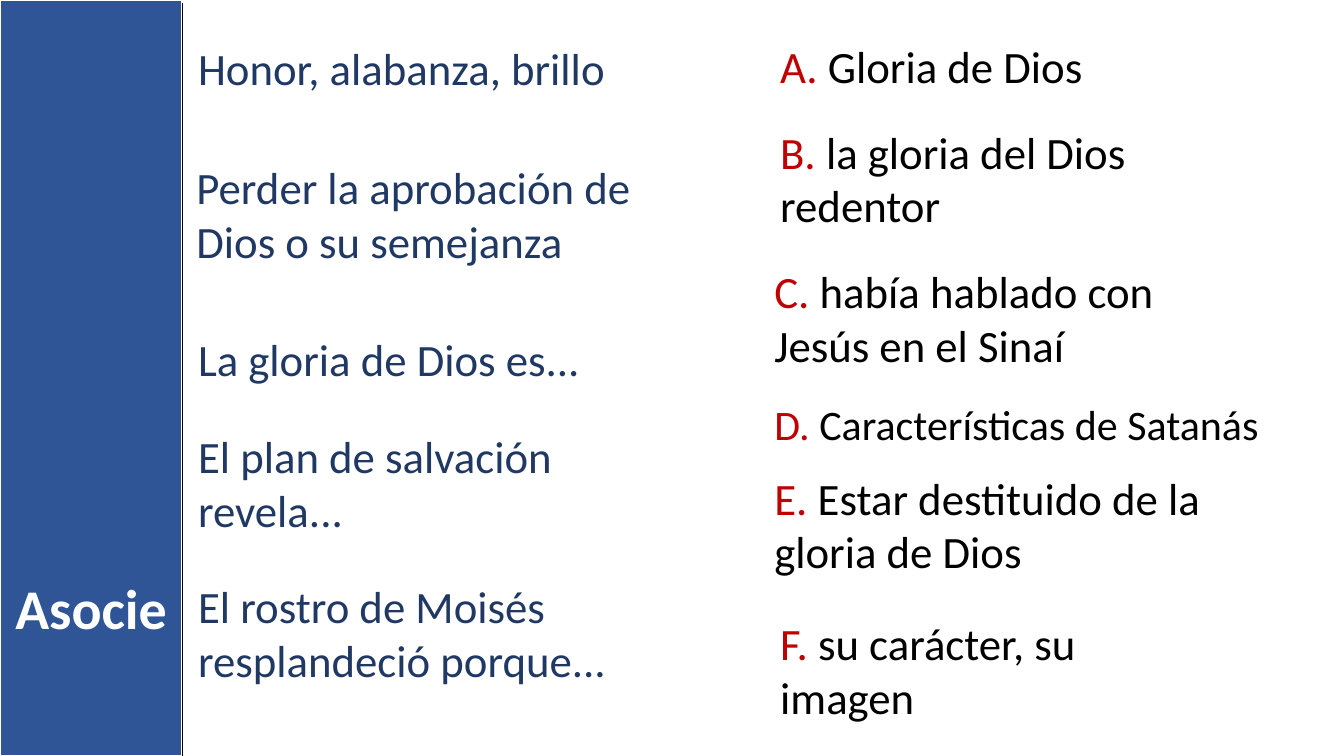
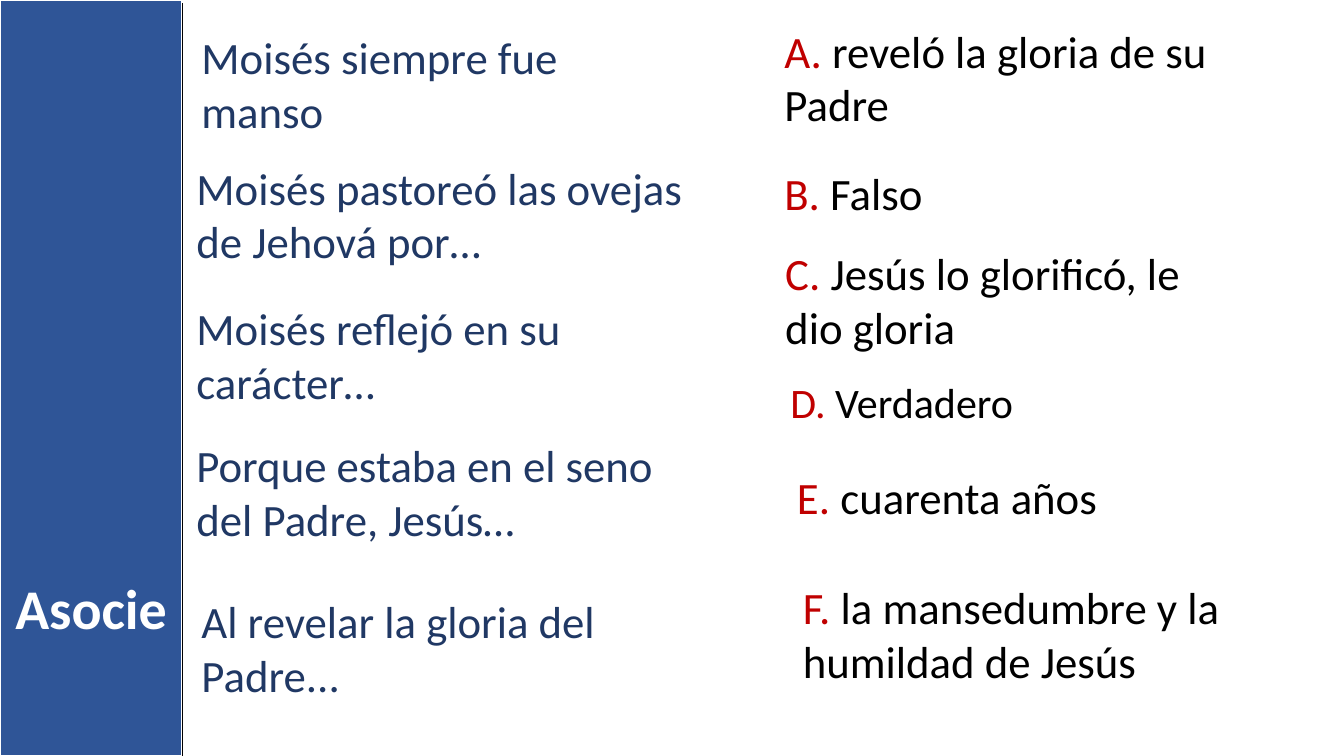
from dataclasses import dataclass

from lxml.etree import SubElement
from pptx import Presentation
from pptx.dml.color import RGBColor
from pptx.enum.shapes import MSO_CONNECTOR as Link, MSO_SHAPE as Form
from pptx.enum.text import MSO_AUTO_SIZE as Fit, PP_ALIGN as Align
from pptx.oxml.ns import qn
from pptx.slide import Slide
from pptx.util import Inches, Pt

COLS, ROWS = 16, 9
CELL = 7.5 / ROWS
BAND = 2.17
FONT = "Calibri"
BLUE, NAVY, RED = "2F5597", "203864", "C00000"
WHITE, BLACK = "FFFFFF", "000000"


@dataclass(frozen=True)
class Item:
    """One phrase, placed in grid cells."""
    text: str
    col: float
    row: float
    width: float
    lines: int = 2
    size: int = 32


@dataclass(frozen=True)
class Quiz:
    clues: tuple[Item, ...]
    answers: tuple[Item, ...]


QUIZZES = (
    Quiz(
        clues=(
            Item("Honor, alabanza, brillo", 2.24, 0.43, 5.93, 1),
            Item("Perder la aprobación de Dios o su semejanza", 2.22, 1.84, 5.77),
            Item("La gloria de Dios es...", 2.24, 3.89, 6.12, 1),
            Item("El plan de salvación revela...", 2.24, 5.05, 5.93),
            Item("El rostro de Moisés resplandeció porque...", 2.24, 6.83, 5.74),
        ),
        answers=(
            Item("Gloria de Dios", 9.17, 0.4, 6, 1),
            Item("la gloria del Dios redentor", 9.17, 1.42, 6.05),
            Item("había hablado con Jesús en el Sinaí", 9.1, 3.08, 5.86),
            Item("Características de Satanás", 9.1, 4.69, 6.35, 1, 30),
            Item("Estar destituido de la gloria de Dios", 9.1, 5.54, 6.19),
            Item("su carácter, su imagen", 9.17, 7.27, 4.98),
        ),
    ),
    Quiz(
        clues=(
            Item("Moisés siempre fue manso", 2.28, 0.3, 5.87),
            Item("Moisés pastoreó las ovejas de Jehová por…", 2.22, 1.85, 6.19),
            Item("Moisés reflejó en su carácter…", 2.22, 3.52, 6.12),
            Item("Porque estaba en el seno del Padre, Jesús…", 2.22, 5.15, 5.93),
            Item("Al revelar la gloria del Padre...", 2.28, 7.01, 6.19),
        ),
        answers=(
            Item("reveló la gloria de su Padre", 9.22, 0.22, 6),
            Item("Falso", 9.22, 1.91, 5.62, 1),
            Item("Jesús lo glorificó, le dio gloria", 9.23, 2.87, 5.68),
            Item("Verdadero", 9.29, 4.42, 5.7, 1, 30),
            Item("cuarenta años", 9.37, 5.53, 5.89, 1),
            Item("la mansedumbre y la humildad de Jesús", 9.44, 6.84, 5.54),
        ),
    ),
)
TITLE = Item("Asocie", 0, 6.77, BAND, 1, 40)


def grid(cells: float) -> int:
    return Inches(cells * CELL)


def tint(code: str) -> RGBColor:
    return RGBColor.from_string(code)


def write(slide: Slide, item: Item, *, color: str, mark: str = "",
          bold: bool = False, align: Align = Align.LEFT) -> None:
    """Place an item, with an optional red mark before its text."""
    high = Inches(0.1) + Pt(item.size * 1.22 * item.lines)
    box = slide.shapes.add_textbox(
        grid(item.col), grid(item.row), grid(item.width), high)
    frame = box.text_frame
    frame.word_wrap = True
    frame.auto_size = Fit.SHAPE_TO_FIT_TEXT
    para = frame.paragraphs[0]
    para.alignment = align
    for text, code in ((mark, RED), (item.text, color)):
        if text:
            run = para.add_run()
            run.text = text
            run.font.name = FONT
            run.font.size = Pt(item.size)
            run.font.bold = bold
            run.font.color.rgb = tint(code)


def band(slide: Slide) -> None:
    side = slide.shapes.add_shape(Form.RECTANGLE, 0, 0, grid(BAND), grid(ROWS))
    side.shadow.inherit = False
    side.fill.solid()
    side.fill.fore_color.rgb = tint(BLUE)
    side.line.color.rgb = tint(WHITE)
    side.line.width = Pt(1.5)


def edge(slide: Slide) -> None:
    rule = slide.shapes.add_connector(
        Link.STRAIGHT, grid(BAND), grid(0.04), grid(BAND), grid(ROWS))
    rule.line.color.rgb = tint(BLACK)
    rule.line.width = Pt(1)
    SubElement(rule._element.spPr, qn("a:effectLst"))


def draw(slide: Slide, quiz: Quiz) -> None:
    band(slide)
    for clue in quiz.clues:
        write(slide, clue, color=NAVY)
    for letter, answer in zip("ABCDEF", quiz.answers):
        write(slide, answer, color=BLACK, mark=f"{letter}. ")
    write(slide, TITLE, color=WHITE, bold=True, align=Align.CENTER)
    edge(slide)


def main() -> None:
    deck = Presentation()
    deck.slide_width, deck.slide_height = grid(COLS), grid(ROWS)
    blank = deck.slide_layouts[6]
    for quiz in QUIZZES:
        draw(deck.slides.add_slide(blank), quiz)
    deck.save("out.pptx")


if __name__ == "__main__":
    main()
